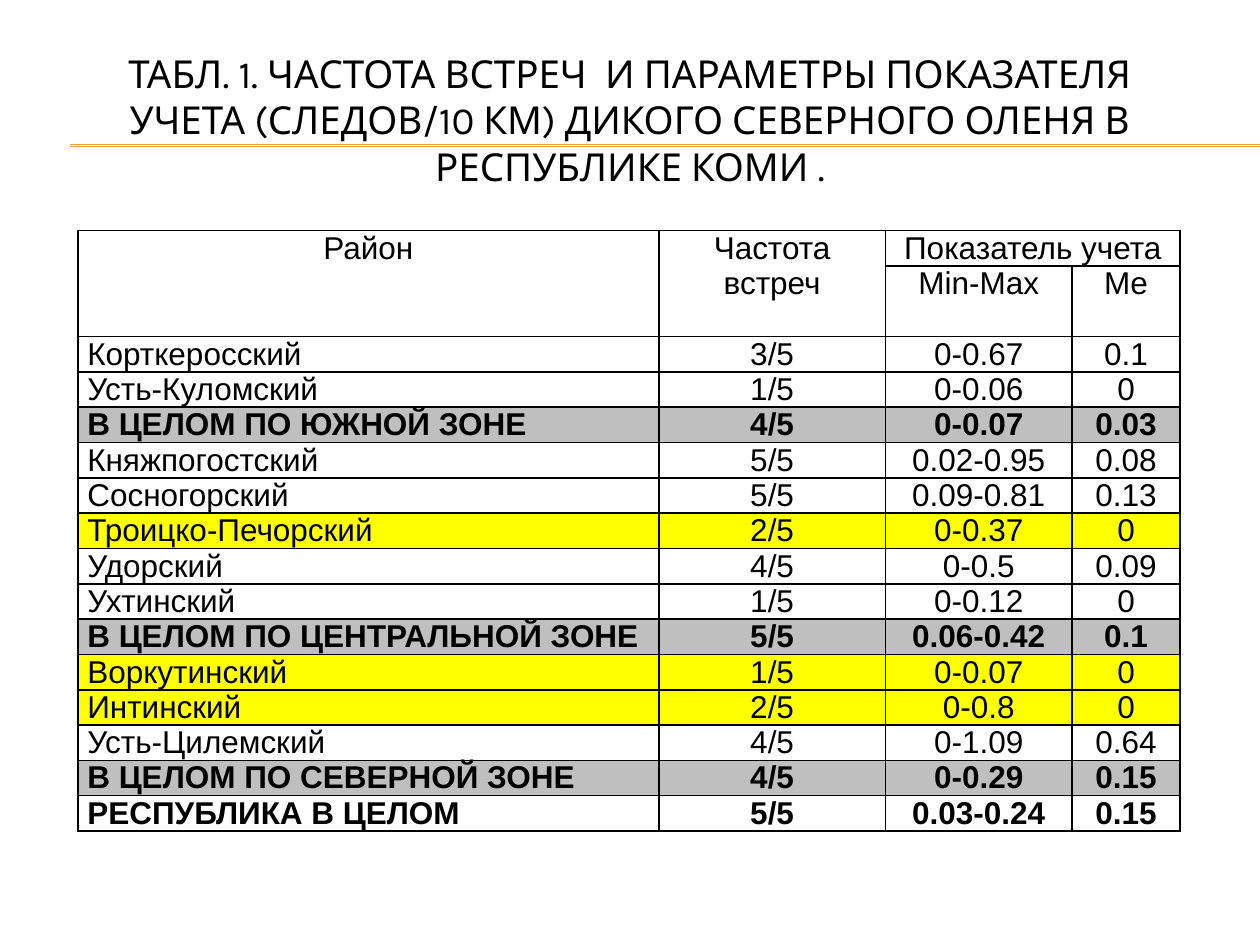
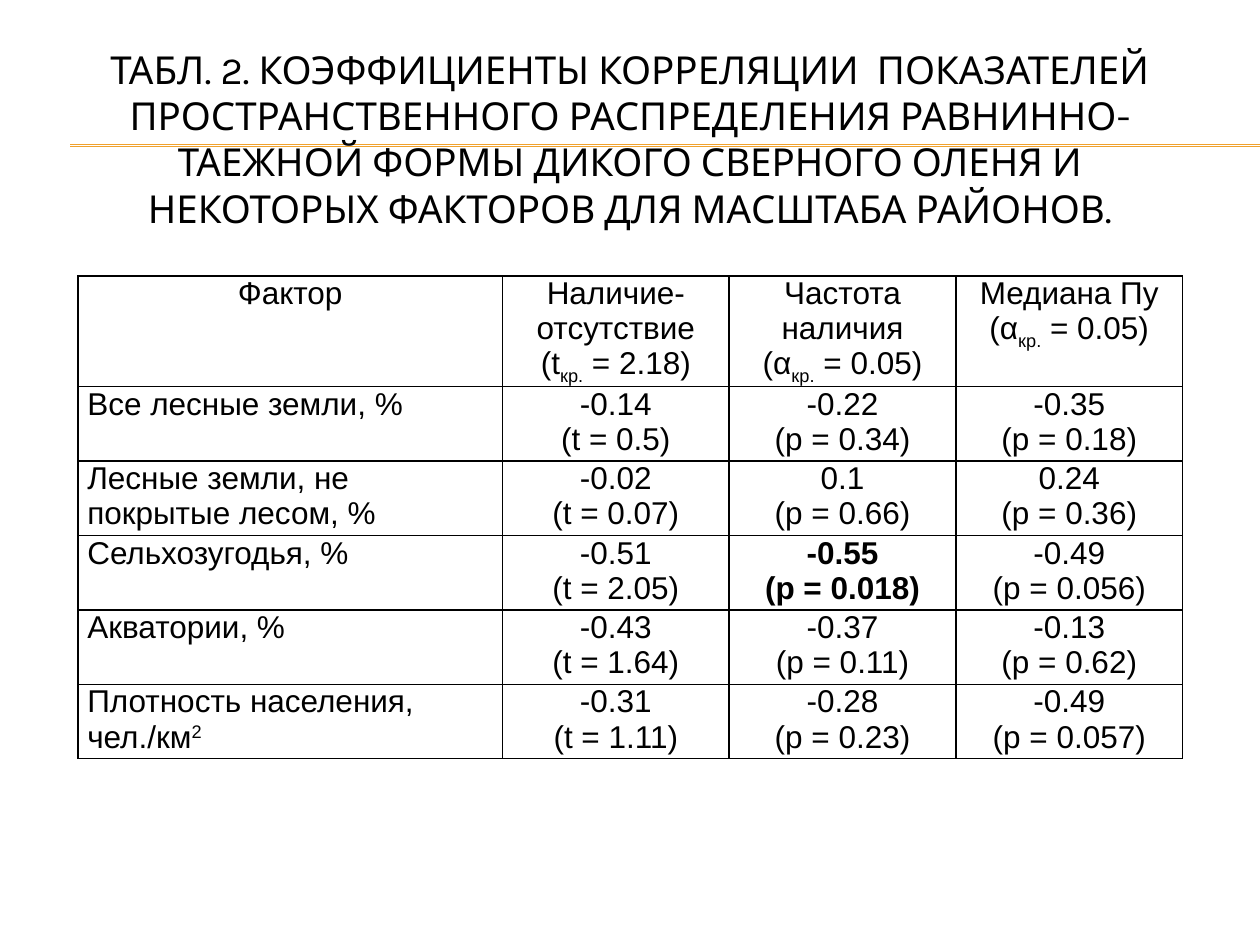
from lxml.etree import SubElement
from pptx import Presentation
from pptx.dml.color import RGBColor
from pptx.enum.shapes import MSO_CONNECTOR as Connector
from pptx.enum.text import MSO_ANCHOR as Anchor, MSO_AUTO_SIZE as AutoSize, PP_ALIGN as Align
from pptx.oxml import parse_xml
from pptx.oxml.ns import nsdecls, qn
from pptx.util import Cm, Pt

COLORS = {
    "text": "000000",
    "border": "000000",
    "rule": "F0A22E",
    "zone": "BFBFBF",
    "marked": "FFFF00",
}
# Raised and lowered pieces of text, in thousandths of a percent
BASELINES = {"кр.": -25000, "2": 30000}

# Table 1: two header rows, then districts and zone totals
ENCOUNTERS = [
    ("Район", "Частота встреч", "Показатель учета", ""),
    ("", "", "Min-Max", "Me"),
    ("Корткеросский", "3/5", "0-0.67", "0.1"),
    ("Усть-Куломский", "1/5", "0-0.06", "0"),
    ("В ЦЕЛОМ ПО ЮЖНОЙ ЗОНЕ", "4/5", "0-0.07", "0.03"),
    ("Княжпогостский", "5/5", "0.02-0.95", "0.08"),
    ("Сосногорский", "5/5", "0.09-0.81", "0.13"),
    ("Троицко-Печорский", "2/5", "0-0.37", "0"),
    ("Удорский", "4/5", "0-0.5", "0.09"),
    ("Ухтинский", "1/5", "0-0.12", "0"),
    ("В ЦЕЛОМ ПО ЦЕНТРАЛЬНОЙ ЗОНЕ", "5/5", "0.06-0.42", "0.1"),
    ("Воркутинский", "1/5", "0-0.07", "0"),
    ("Интинский", "2/5", "0-0.8", "0"),
    ("Усть-Цилемский", "4/5", "0-1.09", "0.64"),
    ("В ЦЕЛОМ ПО СЕВЕРНОЙ ЗОНЕ", "4/5", "0-0.29", "0.15"),
    ("РЕСПУБЛИКА В ЦЕЛОМ", "5/5", "0.03-0.24", "0.15"),
]
MARKED_DISTRICTS = {"Троицко-Печорский", "Воркутинский", "Интинский"}

# Table 2: bars set off the raised and lowered pieces
CORRELATIONS = [
    ("Фактор", "Наличие-отсутствие\n(t|кр.| = 2.18)",
     "Частота наличия\n(α|кр.| = 0.05)", "Медиана Пу\n(α|кр.| = 0.05)"),
    ("Все лесные земли, %", "-0.14\n(t = 0.5)", "-0.22\n(p = 0.34)", "-0.35\n(p = 0.18)"),
    ("Лесные земли, не покрытые лесом, %",
     "-0.02\n(t = 0.07)", "0.1\n(p = 0.66)", "0.24\n(p = 0.36)"),
    ("Сельхозугодья, %", "-0.51\n(t = 2.05)", "-0.55\n(p = 0.018)", "-0.49\n(p = 0.056)"),
    ("Акватории, %", "-0.43\n(t = 1.64)", "-0.37\n(p = 0.11)", "-0.13\n(p = 0.62)"),
    ("Плотность населения,\nчел./км|2",
     "-0.31\n(t = 1.11)", "-0.28\n(p = 0.23)", "-0.49\n(p = 0.057)"),
]
SIGNIFICANT = {"-0.55\n(p = 0.018)"}


def color(name):
    return RGBColor.from_string(COLORS[name])


class Deck:
    """Holds the shared style and the current slide."""

    title_font, title_size = "Karla", Pt(22)
    table_font, table_size = "Arial", Pt(18)
    table_left = Cm(1.57)
    cell_margin = Cm(0.19)

    def __init__(self):
        self.presentation = Presentation()
        self.presentation.slide_width = Cm(25.4)
        self.presentation.slide_height = Cm(19.05)
        self.slide = None

    def add_slide(self, title, title_top):
        layout = self.presentation.slide_layouts.get_by_name("Title Only")
        self.slide = self.presentation.slides.add_slide(layout)
        self.add_title(title, title_top)
        for y in (Cm(2.92), Cm(2.95)):
            self.add_rule(y)

    def style_run(self, run, font, size, bold=False):
        run.font.name = font
        run.font.size = size
        run.font.bold = bold
        run.font.color.rgb = color("text")

    def add_title(self, text, top):
        title = self.slide.shapes.title
        title.left, title.top, title.width, title.height = Cm(1.27), top, Cm(22.86), Cm(4)
        frame = title.text_frame
        frame.text = text
        frame.word_wrap = True
        frame.auto_size = AutoSize.NONE
        frame.vertical_anchor = Anchor.MIDDLE
        paragraph = frame.paragraphs[0]
        paragraph.alignment = Align.CENTER
        self.style_run(paragraph.runs[0], self.title_font, self.title_size)

    def add_rule(self, y):
        shapes = self.slide.shapes
        rule = shapes.add_connector(
            Connector.STRAIGHT, Cm(1.42), y, self.presentation.slide_width, y)
        rule.line.color.rgb = color("rule")
        rule.line.width = Pt(0.75)
        SubElement(rule.element.spPr, qn("a:effectLst"))
        # Behind the title: right after the two group property elements
        shapes.element.insert(2, rule.element)

    def add_table(self, rows, top, widths, heights, header_rows=1,
                  row_fill=lambda row: None, is_bold=lambda row, text: False):
        table = self.slide.shapes.add_table(
            len(rows), len(widths), self.table_left, top, sum(widths), sum(heights)).table
        table.first_row = table.horz_banding = False
        for column, width in zip(table.columns, widths):
            column.width = width
        for table_row, height in zip(table.rows, heights):
            table_row.height = height
        for i, row in enumerate(rows):
            for j, text in enumerate(row):
                centered = j > 0 or i < header_rows
                self.fill_cell(table.cell(i, j), text, centered, row_fill(row),
                               is_bold(row, text))
        return table

    def fill_cell(self, cell, text, centered, fill, bold):
        cell.margin_left = cell.margin_right = self.cell_margin
        cell.margin_top = cell.margin_bottom = 0
        cell.vertical_anchor = Anchor.TOP
        if fill:
            cell.fill.solid()
            cell.fill.fore_color.rgb = color(fill)
        else:
            cell.fill.background()
        self.add_borders(cell)
        frame = cell.text_frame
        frame.text = text.replace("|", "")
        for paragraph, line in zip(frame.paragraphs, text.split("\n")):
            paragraph.alignment = Align.CENTER if centered else Align.LEFT
            paragraph.font.size = self.table_size
            pieces = line.split("|")
            if len(pieces) > 1:
                paragraph.clear()
                for piece in pieces:
                    run = paragraph.add_run()
                    run.text = piece
                    if piece in BASELINES:
                        run._r.get_or_add_rPr().set("baseline", str(BASELINES[piece]))
            for run in paragraph.runs:
                self.style_run(run, self.table_font, self.table_size, bold)

    def add_borders(self, cell):
        properties = cell._tc.get_or_add_tcPr()
        for position, side in enumerate("LRTB"):
            properties.insert(position, parse_xml(
                f'<a:ln{side} {nsdecls("a")} w="{Pt(1)}"><a:solidFill>'
                f'<a:srgbClr val="{COLORS["border"]}"/></a:solidFill></a:ln{side}>'))


def encounter_fill(row):
    if row[0] in MARKED_DISTRICTS:
        return "marked"
    return "zone" if row[0].startswith("В ЦЕЛОМ") else None


def main():
    deck = Deck()

    # Slide 1: encounter frequency by district
    deck.add_slide("ТАБЛ. 1. ЧАСТОТА ВСТРЕЧ  И ПАРАМЕТРЫ ПОКАЗАТЕЛЯ УЧЕТА (СЛЕДОВ/10 КМ) "
                   "ДИКОГО СЕВЕРНОГО ОЛЕНЯ В РЕСПУБЛИКЕ КОМИ .", Cm(0.41))
    heights = [Cm(0.71)] * len(ENCOUNTERS)
    heights[1] = Cm(1.42)
    table = deck.add_table(
        ENCOUNTERS, Cm(4.65), [Cm(11.71), Cm(4.57), Cm(3.76), Cm(2.18)], heights,
        header_rows=2, row_fill=encounter_fill, is_bold=lambda row, text: row[0].isupper())
    for first, last in (((0, 0), (1, 0)), ((0, 1), (1, 1)), ((0, 2), (0, 3))):
        table.cell(*first).merge(table.cell(*last))

    # Slide 2: correlation coefficients
    deck.add_slide("ТАБЛ. 2. КОЭФФИЦИЕНТЫ КОРРЕЛЯЦИИ  ПОКАЗАТЕЛЕЙ ПРОСТРАНСТВЕННОГО "
                   "РАСПРЕДЕЛЕНИЯ РАВНИННО-ТАЕЖНОЙ ФОРМЫ ДИКОГО СВЕРНОГО ОЛЕНЯ И "
                   "НЕКОТОРЫХ ФАКТОРОВ ДЛЯ МАСШТАБА РАЙОНОВ.", Cm(0.79))
    deck.add_table(
        CORRELATIONS, Cm(5.56), [Cm(8.56)] + [Cm(4.57)] * 3,
        [Cm(2.21)] + [Cm(1.5)] * (len(CORRELATIONS) - 1),
        is_bold=lambda row, text: text in SIGNIFICANT)

    deck.presentation.save("out.pptx")


if __name__ == "__main__":
    main()
